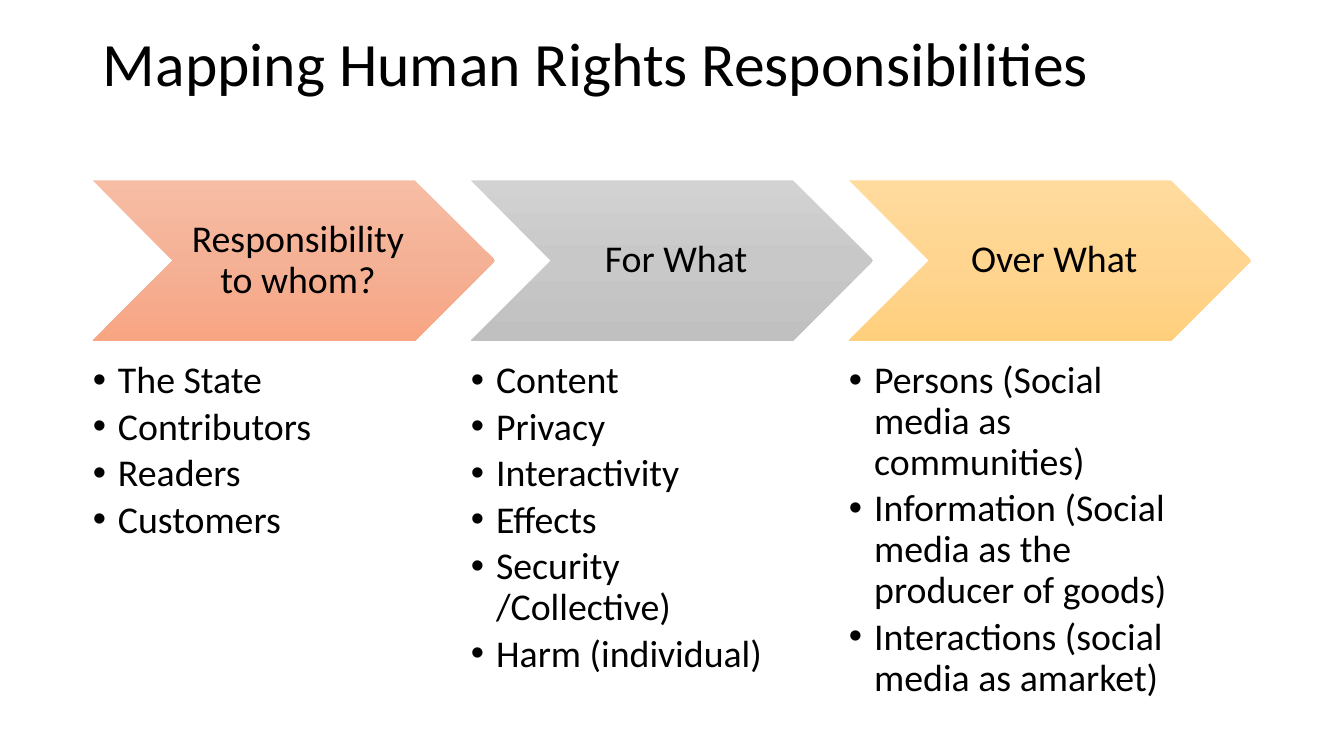
"""Build the slide that maps human rights responsibilities in three columns."""
from copy import deepcopy
from dataclasses import dataclass

from lxml import etree
from pptx import Presentation
from pptx.dml.color import RGBColor
from pptx.enum.shapes import MSO_SHAPE
from pptx.enum.text import MSO_ANCHOR, MSO_AUTO_SIZE, PP_ALIGN
from pptx.oxml.ns import qn
from pptx.util import Pt

CHEVRON = MSO_SHAPE.CHEVRON
LEFT, CENTER = PP_ALIGN.LEFT, PP_ALIGN.CENTER
TOP, MIDDLE = MSO_ANCHOR.TOP, MSO_ANCHOR.MIDDLE
NO_FIT = MSO_AUTO_SIZE.NONE

EMU_PER_PX = 9144
FONT = "Calibri"
COLORS = {
    "text": "000000",
    "orange": ("F7BDA5", "F5B196", "F8A582"),
    "gray": ("D2D2D2", "C8C8C8", "C0C0C0"),
    "gold": ("FFDB9E", "FFD590", "FFD07C"),
}
COMPARISON_LAYOUT = 4
COLUMN_LEFT, COLUMN_PITCH = 92, 375
BODY_SIZE = 27


@dataclass(frozen=True)
class Column:
    """A chevron heading with the list below it."""
    heading: str
    color: str
    items: tuple[str, ...]


COLUMNS = (
    Column("Responsibility to whom?", "orange",
           ("The State", "Contributors", "Readers", "Customers")),
    Column("For What", "gray",
           ("Content", "Privacy", "Interactivity", "Effects",
            "Security /Collective)", "Harm (individual)")),
    Column("Over What", "gold",
           ("Persons (Social media as communities)",
            "Information (Social media as the producer of goods)",
            "Interactions (social media as amarket)")),
)


def px(length: int) -> int:
    """Turn px into EMU."""
    return length * EMU_PER_PX


def place(shape, left: int, top: int, width: int, height: int) -> None:
    """Move and size a shape."""
    shape.left, shape.top = px(left), px(top)
    shape.width, shape.height = px(width), px(height)


def set_frame(frame, anchor, insets: tuple[int, int, int, int]) -> None:
    """Set anchor, wrapping and insets of a text frame."""
    frame.auto_size = NO_FIT
    frame.word_wrap = True
    frame.vertical_anchor = anchor
    (frame.margin_left, frame.margin_top,
     frame.margin_right, frame.margin_bottom) = map(px, insets)


def format_para(para, size: int, align, after: float = 0) -> None:
    """Format a paragraph and its runs."""
    para.alignment = align
    para.line_spacing = 0.9
    para.space_before = Pt(0)
    para.space_after = Pt(after)
    for span in para.runs:
        span.font.name = FONT
        span.font.size = Pt(size)
        span.font.bold = False
        span.font.color.rgb = RGBColor.from_string(COLORS["text"])


def add_bullet(para, indent: int) -> None:
    """Give a paragraph a round bullet and a hanging indent."""
    properties = para._p.get_or_add_pPr()
    properties.set("marL", str(px(indent)))
    properties.set("indent", str(-px(indent)))
    etree.SubElement(properties, qn("a:buFont"), typeface="Arial")
    etree.SubElement(properties, qn("a:buChar"), char="•")


def fill_gradient(shape, colors: tuple[str, ...]) -> None:
    """Fill a shape from top to bottom with three colours."""
    shape.fill.gradient()
    shape.fill.gradient_angle = 270
    stop_list = shape.element.spPr.find(f".//{qn('a:gsLst')}")
    stop_list.insert(1, deepcopy(stop_list[0]))
    for index, (stop, color) in enumerate(zip(shape.fill.gradient_stops, colors)):
        stop.position = index / 2
        stop.color.rgb = RGBColor.from_string(color)


def draw_title(title) -> None:
    """Write the slide title."""
    place(title, 92, 0, 1150, 132)
    title.text_frame.text = "Mapping Human Rights Responsibilities"
    set_frame(title.text_frame, MIDDLE, (10, 5, 10, 5))
    format_para(title.text_frame.paragraphs[0], 44, LEFT)


def draw_chevron(page, column: Column, left: int) -> None:
    """Draw the chevron heading of a column."""
    chevron = page.shapes.add_shape(CHEVRON, 0, 0, 0, 0)
    place(chevron, left, 179, 399, 159)
    chevron.shadow.inherit = False
    chevron.line.fill.background()
    fill_gradient(chevron, COLORS[column.color])
    chevron.text_frame.text = column.heading
    set_frame(chevron.text_frame, MIDDLE, (12, 4, 4, 4))
    format_para(chevron.text_frame.paragraphs[0], BODY_SIZE, CENTER)


def draw_list(box, column: Column, left: int) -> None:
    """Write the bullet list of a column."""
    place(box, left, 358, 319, 346)
    box.text_frame.text = "\n".join(column.items)
    set_frame(box.text_frame, TOP, (0, 0, 0, 0))
    for para in box.text_frame.paragraphs:
        add_bullet(para, 25)
        format_para(para, BODY_SIZE, LEFT, after=4.05)


def main() -> None:
    """Build and save the deck."""
    deck = Presentation()
    deck.slide_width, deck.slide_height = px(1333), px(750)
    page = deck.slides.add_slide(deck.slide_layouts[COMPARISON_LAYOUT])
    draw_title(page.shapes.title)
    boxes = [box for box in page.placeholders if box.placeholder_format.idx > 0]
    for index, column in enumerate(COLUMNS):
        left = COLUMN_LEFT + index * COLUMN_PITCH
        draw_chevron(page, column, left)
        draw_list(boxes[index], column, left)
    for box in boxes[len(COLUMNS):]:
        box.element.getparent().remove(box.element)
    deck.save("out.pptx")


if __name__ == "__main__":
    main()
